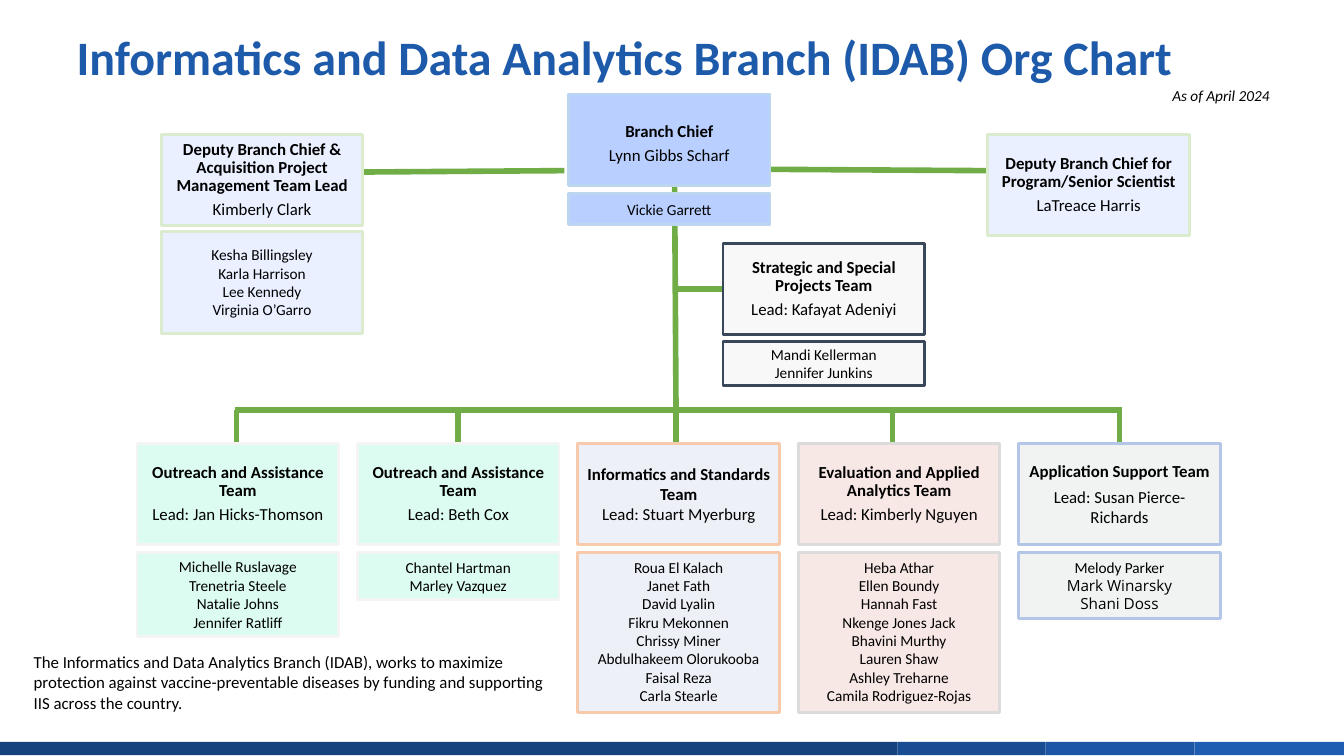
"""Build the organisation chart slide of the Informatics and Data Analytics Branch."""
from lxml.etree import SubElement
from pptx import Presentation
from pptx.dml.color import RGBColor
from pptx.enum.shapes import MSO_CONNECTOR, MSO_SHAPE
from pptx.enum.text import MSO_ANCHOR, PP_ALIGN
from pptx.oxml.ns import qn
from pptx.util import Inches, Pt

THEME = {
    "connector": "70AD47",
    "footer": ["164380", "194D93", "1C56A4", "1E5DB2"],
    "boxes": {
        "chief": ("B9CFFF", "BBD6EE", 100),
        "deputy": ("D6E3FF", "DBEBCE", 50),
        "projects": ("F2F2F2", "39475A", 50),
        "outreach": ("BAF9E5", "F5F4F4", 50),
        "informatics": ("DDE2F0", "F7CAAC", 50),
        "evaluation": ("F3D3CC", "DBDBDB", 50),
        "support": ("E5E6E6", "B3C6E7", 50),
    },
    "text": {
        "title": ("1E5AAA", {"name": "Calibri", "size": Pt(25.7), "bold": True}),
        "date": ("000000", {"name": "Calibri", "size": Pt(8.2), "italic": True}),
        "head": ("000000", {"name": "Calibri", "size": Pt(9), "bold": True}),
        "lead": ("000000", {"name": "Calibri", "size": Pt(9), "bold": False}),
        "member": ("000000", {"name": "Calibri", "size": Pt(8.2)}),
        "alternate": ("000000", {"name": "Open Sans", "size": Pt(8.2)}),
    },
}
SPACED = {"line_spacing": 0.9, "gap": 3.1}
ALTERNATE_NAMES = ("Mark Winarsky", "Shani Doss")

TITLE = "Informatics and Data Analytics Branch (IDAB) Org Chart"
DATE = "As of April 2024"
MISSION = (
    "The Informatics and Data Analytics Branch (IDAB), works to maximize protection against "
    "vaccine-preventable diseases by funding and supporting IIS across the country."
)

LEADERS = [
    ("chief", (4.23, 0.7, 1.5, 0.68), 0.07, "Branch Chief", "Lynn Gibbs Scharf"),
    ("deputy", (1.2, 1, 1.5, 0.68), 0.01,
     "Deputy Branch Chief & Acquisition Project Management Team Lead", "Kimberly Clark"),
    ("projects", (5.38, 1.81, 1.5, 0.68), 0.01,
     "Strategic and Special Projects Team", "Lead: Kafayat Adeniyi"),
    ("deputy", (7.35, 1, 1.5, 0.75), 0.01,
     "Deputy Branch Chief for Program/Senior Scientist", "LaTreace Harris"),
]
STAFF = [
    ("chief", (4.23, 1.44, 1.5, 0.23), ["Vickie Garrett"]),
    ("deputy", (1.2, 1.72, 1.5, 0.76),
     ["Kesha Billingsley", "Karla Harrison", "Lee Kennedy", "Virginia O’Garro"]),
    ("projects", (5.38, 2.54, 1.5, 0.33), ["Mandi Kellerman", "Jennifer Junkins"]),
]
TEAMS = [
    ("outreach", "Outreach and Assistance Team", "Lead: Jan Hicks-Thomson", SPACED, 0.07,
     ["Michelle Ruslavage", "Trenetria Steele", "Natalie Johns", "Jennifer Ratliff"]),
    ("outreach", "Outreach and Assistance Team", "Lead: Beth Cox", SPACED, 0.07,
     ["Chantel Hartman", "Marley Vazquez"]),
    ("informatics", "Informatics and Standards Team", "Lead: Stuart Myerburg",
     {"line_spacing": 1.0, "gap": 0}, 0.04,
     ["Roua El Kalach", "Janet Fath", "David Lyalin", "Fikru Mekonnen", "Chrissy Miner",
      "Abdulhakeem Olorukooba", "Faisal Reza", "Carla Stearle"]),
    ("evaluation", "Evaluation and Applied Analytics Team", "Lead: Kimberly Nguyen", SPACED, 0.07,
     ["Heba Athar", "Ellen Boundy", "Hannah Fast", "Nkenge Jones Jack", "Bhavini Murthy",
      "Lauren Shaw", "Ashley Treharne", "Camila Rodriguez-Rojas"]),
    ("support", "Application Support Team", "Lead: Susan Pierce-Richards",
     {"line_spacing": 1.0, "gap": 3.1}, 0.07,
     ["Melody Parker", "Mark Winarsky", "Shani Doss"]),
]

SLIDE_WIDTH = Inches(10)
SLIDE_HEIGHT = SLIDE_WIDTH * 9 // 16
TEAM_LEFT, TEAM_PITCH, TEAM_WIDTH = 1.02, 1.64, 1.5
TEAM_TOP, TEAM_HEIGHT, MEMBER_TOP = 3.3, 0.75, 4.11
MEMBER_PADDING, MEMBER_LINE = 0.07, 0.14
RAIL_TOP, STUB_BOTTOM = 3.05, 3.29
STUBS = [1.76, 3.41, 5.03, 6.64, 8.33]
LINKS = [
    (5.03, 2.15, 5.38, 2.15),
    (2.71, 1.28, 4.2, 1.27),
    (5.03, RAIL_TOP, 5.02, 1.39),
    (5.72, 1.26, 7.34, 1.27),
    (1.75, RAIL_TOP, 8.35, RAIL_TOP),
]
FOOTER_EDGES, FOOTER_TOP, FOOTER_HEIGHT = [0, 6.68, 7.78, 8.89, 10], 5.52, 0.1


def set_values(target, values):
    for name, value in values.items():
        setattr(target, name, value)


def write_text(shape, entries, side=0.07, top=0.01, bottom=0.01, anchor=MSO_ANCHOR.MIDDLE,
               alignment=PP_ALIGN.CENTER, line_spacing=1.0, gap=0):
    frame = shape.text_frame
    set_values(frame, {
        "word_wrap": True, "vertical_anchor": anchor,
        "margin_left": Inches(side), "margin_right": Inches(side),
        "margin_top": Inches(top), "margin_bottom": Inches(bottom),
    })
    for index, (text, style) in enumerate(entries):
        paragraph = frame.paragraphs[0] if index == 0 else frame.add_paragraph()
        set_values(paragraph, {
            "alignment": alignment, "line_spacing": line_spacing,
            "space_before": Pt(gap if index else 0),
        })
        run = paragraph.add_run()
        run.text = text
        color, font_values = THEME["text"][style]
        set_values(run.font, font_values)
        run.font.color.rgb = RGBColor.from_string(color)


def add_rectangle(slide, place, fill, opacity=100):
    shape = slide.shapes.add_shape(MSO_SHAPE.RECTANGLE, *map(Inches, place))
    shape.shadow.inherit = False
    shape.fill.solid()
    shape.fill.fore_color.rgb = RGBColor.from_string(fill)
    if opacity < 100:
        color = shape._element.spPr.find(".//" + qn("a:srgbClr"))
        SubElement(color, qn("a:alpha"), val=str(opacity * 1000))
    shape.line.fill.background()
    return shape


def add_box(slide, kind, place, entries, **text_values):
    fill, outline, opacity = THEME["boxes"][kind]
    shape = add_rectangle(slide, place, fill, opacity)
    shape.line.color.rgb = RGBColor.from_string(outline)
    shape.line.width = Pt(1.5)
    write_text(shape, entries, **text_values)


def add_link(slide, ends):
    connector = slide.shapes.add_connector(MSO_CONNECTOR.STRAIGHT, *map(Inches, ends))
    connector.line.color.rgb = RGBColor.from_string(THEME["connector"])
    connector.line.width = Pt(3)
    SubElement(connector._element.spPr, qn("a:effectLst"))


def add_label(slide, place, text, style, **text_values):
    label = slide.shapes.add_textbox(*map(Inches, place))
    write_text(label, [(text, style)], top=0.04, bottom=0.04, **text_values)


def member_entries(names):
    return [(name, "alternate" if name in ALTERNATE_NAMES else "member") for name in names]


def main():
    presentation = Presentation()
    set_values(presentation, {"slide_width": SLIDE_WIDTH, "slide_height": SLIDE_HEIGHT})
    slide = presentation.slides.add_slide(presentation.slide_layouts[6])

    for left, right, color in zip(FOOTER_EDGES, FOOTER_EDGES[1:], THEME["footer"]):
        add_rectangle(slide, (left, FOOTER_TOP, right - left, FOOTER_HEIGHT), color)
    for ends in LINKS + [(x, RAIL_TOP, x, STUB_BOTTOM) for x in STUBS]:
        add_link(slide, ends)

    for kind, place, top, head, lead in LEADERS:
        add_box(slide, kind, place, [(head, "head"), (lead, "lead")], top=top, **SPACED)
    for kind, place, names in STAFF:
        add_box(slide, kind, place, member_entries(names))

    add_label(slide, (8.47, 0.6, 1.23, 0.21), DATE, "date", anchor=MSO_ANCHOR.TOP)
    add_label(slide, (0.18, 4.7, 4.05, 0.75), MISSION, "lead", alignment=PP_ALIGN.LEFT)
    add_label(slide, (0.5, 0.14, 9, 0.94), TITLE, "title", anchor=MSO_ANCHOR.TOP,
              alignment=PP_ALIGN.LEFT, line_spacing=1.06)

    for index, (kind, head, lead, spacing, side, names) in enumerate(TEAMS):
        left = TEAM_LEFT + index * TEAM_PITCH
        add_box(slide, kind, (left, TEAM_TOP, TEAM_WIDTH, TEAM_HEIGHT),
                [(head, "head"), (lead, "lead")], side=side, **spacing)
        height = MEMBER_PADDING + MEMBER_LINE * len(names)
        add_box(slide, kind, (left, MEMBER_TOP, TEAM_WIDTH, height), member_entries(names),
                top=0.04, bottom=0.04, anchor=MSO_ANCHOR.TOP)

    presentation.save("out.pptx")


if __name__ == "__main__":
    main()
